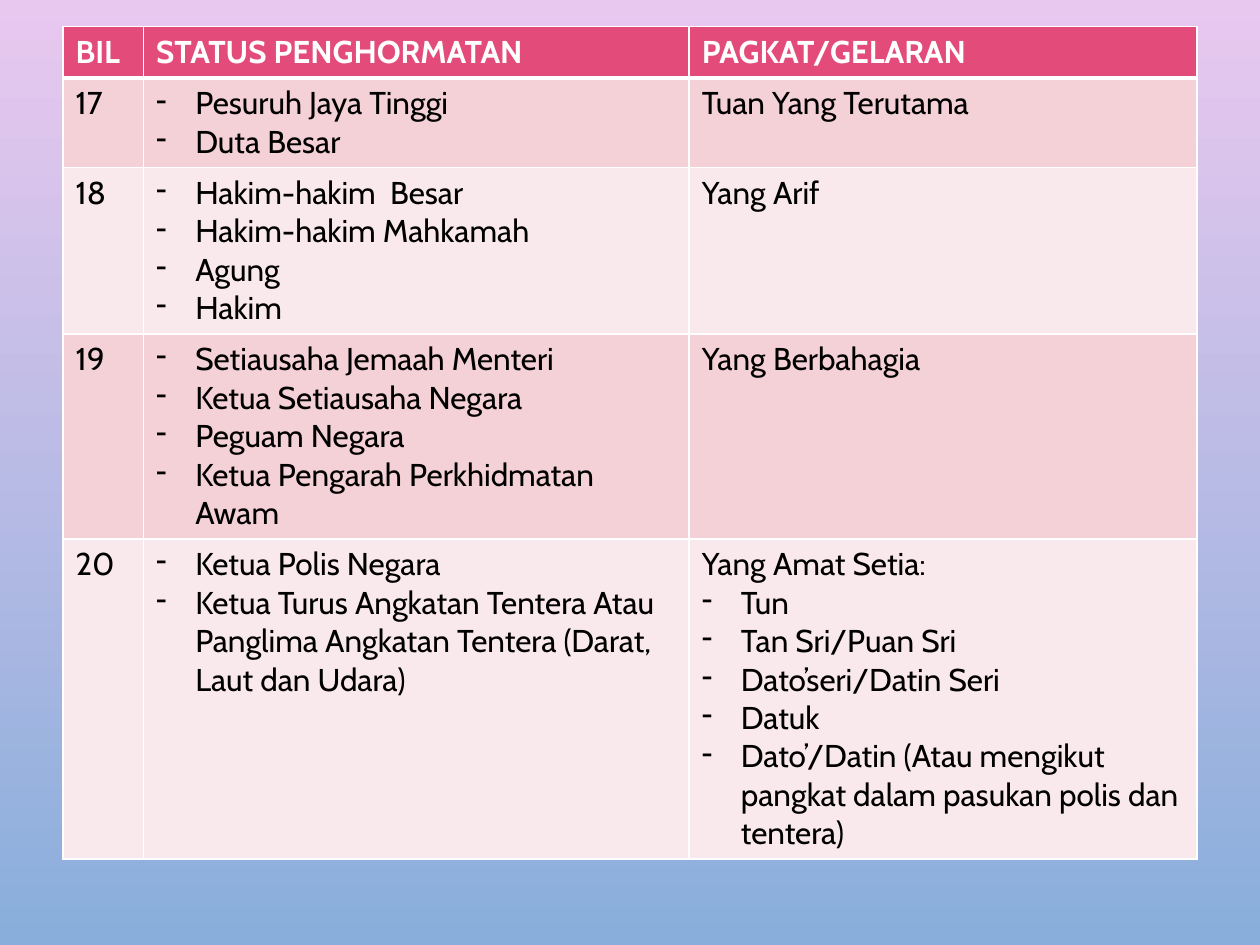
from lxml.etree import SubElement
from pptx import Presentation
from pptx.dml.color import RGBColor
from pptx.oxml import parse_xml
from pptx.oxml.ns import nsdecls, qn
from pptx.util import Inches, Pt

HUES = {
    "top": "E9C8EF", "base": "89AEDB", "head": "E34B7A",
    "odd": "F4D0D7", "even": "FAE9EC", "line": "FFFFFF",
    "light": "FFFFFF", "dark": "000000",
}
FONT = "Cabin"
WIDTHS = (0.64, 4.33, 4.03)
ROW = 0.41
DASH = "- "
ROWS = [
    ("BIL", "STATUS PENGHORMATAN", "PAGKAT/GELARAN"),
    ("17", "- Pesuruh Jaya Tinggi\n- Duta Besar", "Tuan Yang Terutama"),
    ("18", "- Hakim-hakim  Besar\n- Hakim-hakim Mahkamah\n- Agung\n- Hakim",
     "Yang Arif"),
    ("19", "- Setiausaha Jemaah Menteri\n- Ketua Setiausaha Negara\n"
     "- Peguam Negara\n- Ketua Pengarah Perkhidmatan Awam",
     "Yang Berbahagia"),
    ("20", "- Ketua Polis Negara\n- Ketua Turus Angkatan Tentera Atau "
     "Panglima Angkatan Tentera (Darat, Laut dan Udara)",
     "Yang Amat Setia:\n- Tun\n- Tan Sri/Puan Sri\n- Dato’seri/Datin Seri\n"
     "- Datuk\n- Dato’/Datin (Atau mengikut pangkat dalam pasukan polis "
     "dan tentera)"),
]


def hue(name):
    """Return a named colour."""
    return RGBColor.from_string(HUES[name])


def paint_back(slide):
    """Fill the background with a gradient from top to bottom."""
    fill = slide.background.fill
    fill.gradient()
    fill.gradient_angle = 270
    for stop, name in zip(fill.gradient_stops, ("top", "base")):
        stop.color.rgb = hue(name)


def add_dash(para):
    """Give a paragraph a dash bullet and a hanging indent."""
    props = para._p.get_or_add_pPr()
    props.set("marL", str(Inches(0.31)))
    props.set("indent", str(-Inches(0.31)))
    SubElement(props, qn("a:buChar")).set("char", "-")


def add_edges(cell, row):
    """Draw the cell borders, thicker below the header."""
    props = cell._tc.get_or_add_tcPr()
    sizes = {"L": 1, "R": 1, "T": 3 if row == 1 else 1, "B": 1 if row else 3}
    for spot, (side, size) in enumerate(sizes.items()):
        props.insert(spot, parse_xml(
            f'<a:ln{side} {nsdecls("a")} w="{Pt(size)}"><a:solidFill>'
            f'<a:srgbClr val="{HUES["line"]}"/></a:solidFill></a:ln{side}>'))


def fill_cell(cell, text, row):
    """Write and format one cell."""
    cell.fill.solid()
    cell.fill.fore_color.rgb = hue(("odd" if row % 2 else "even") if row else "head")
    add_edges(cell, row)
    cell.text_frame.text = text
    for para in cell.text_frame.paragraphs:
        if para.text.startswith(DASH):
            para.text = para.text.removeprefix(DASH)
            add_dash(para)
        for run in para.runs:
            run.font.name = FONT
            run.font.size = Pt(18)
            run.font.bold = row == 0
            run.font.color.rgb = hue("dark" if row else "light")


def add_grid(slide):
    """Add the table of honours and titles."""
    frame = slide.shapes.add_table(
        len(ROWS), len(WIDTHS), Inches(0.5), Inches(0.21),
        Inches(sum(WIDTHS)), Inches(ROW * len(ROWS)))
    grid = frame.table
    for col, width in zip(grid.columns, WIDTHS):
        col.width = Inches(width)
    for row, texts in enumerate(ROWS):
        grid.rows[row].height = Inches(ROW)
        for col, text in enumerate(texts):
            fill_cell(grid.cell(row, col), text, row)
    frame.height = Inches(6.21)


def main():
    """Build and save the slide."""
    deck = Presentation()
    deck.slide_width, deck.slide_height = Inches(10), Inches(7.5)
    slide = deck.slides.add_slide(deck.slide_layouts[6])
    paint_back(slide)
    add_grid(slide)
    deck.save("out.pptx")


if __name__ == "__main__":
    main()
